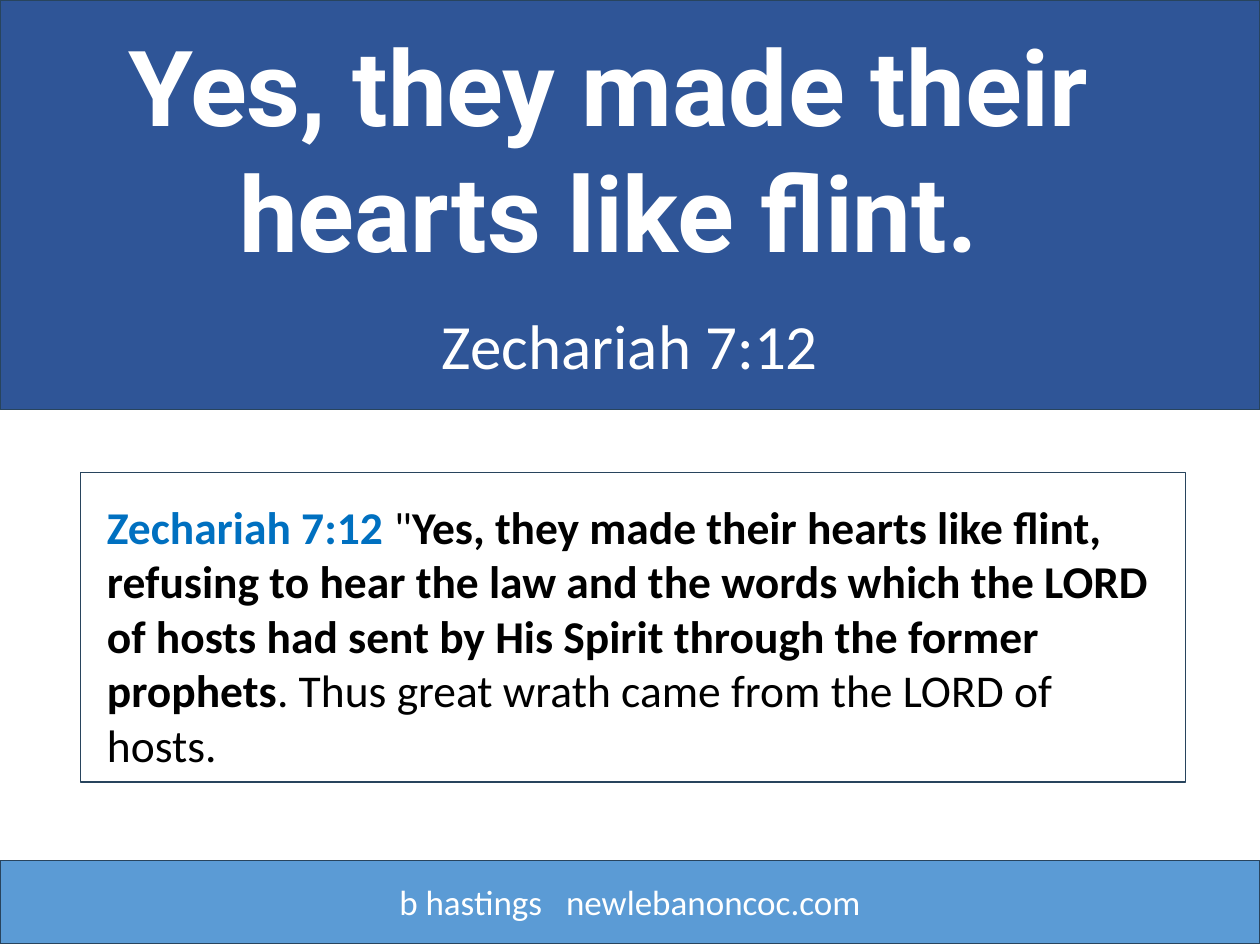
from pptx import Presentation
from pptx.dml.color import RGBColor
from pptx.enum.shapes import MSO_SHAPE
from pptx.enum.text import MSO_ANCHOR, MSO_AUTO_SIZE, PP_ALIGN
from pptx.util import Inches, Pt

NAVY = RGBColor(0x2F, 0x55, 0x97)
SKY = RGBColor(0x5B, 0x9B, 0xD5)
EDGE = RGBColor(0x28, 0x44, 0x5D)
BLUE = RGBColor(0x00, 0x70, 0xC0)
WHITE = RGBColor(0xFF, 0xFF, 0xFF)
BLACK = RGBColor(0x00, 0x00, 0x00)


class Page:
    font = "Calibri"

    def __init__(self, slide):
        self.slide = slide
        self.shapes = slide.shapes

    def rect(self, box, fill=None):
        shape = self.shapes.add_shape(MSO_SHAPE.RECTANGLE, *map(Inches, box))
        shape.shadow.inherit = False
        if fill is None:
            shape.fill.background()
        else:
            shape.fill.solid()
            shape.fill.fore_color.rgb = fill
        shape.line.color.rgb = EDGE
        shape.line.width = Pt(1)

    def style(self, run, size, color, bold=False, font=None):
        run.font.name = font or self.font
        run.font.size = Pt(size)
        run.font.bold = bold
        run.font.color.rgb = color

    def place(self, shape, box):
        shape.left, shape.top, shape.width, shape.height = map(Inches, box)
        frame = shape.text_frame
        frame.word_wrap = True
        frame.auto_size = MSO_AUTO_SIZE.NONE
        frame.vertical_anchor = MSO_ANCHOR.TOP
        return frame.paragraphs[0]

    def head(self, shape, box, text, size, font=None):
        self.shapes._spTree.append(shape._element)
        line = self.place(shape, box)
        line.text = text
        line.alignment = PP_ALIGN.CENTER
        line.space_before = Pt(0)
        self.style(line.runs[0], size, WHITE, font is not None, font)

    def text(self, box, parts, size, align=PP_ALIGN.LEFT):
        line = self.place(self.shapes.add_textbox(*map(Inches, box)), box)
        line.alignment = align
        for words, color, bold in parts:
            run = line.add_run()
            run.text = words
            self.style(run, size, color, bold)
        return line


def main():
    deck = Presentation()
    deck.slide_width, deck.slide_height = Inches(10), Inches(7.5)
    page = Page(deck.slides.add_slide(deck.slide_layouts[0]))
    title, verse = page.slide.placeholders

    page.rect((0, 6.83, 10, 0.66), SKY)
    page.rect((0, 0, 10, 3.25), NAVY)
    foot = page.text((0, 6.94, 10, 0.44), [
        ("b hastings", WHITE, False),
        (" ", WHITE, False),
        ("newlebanoncoc.com", WHITE, False),
    ], 20, PP_ALIGN.CENTER)
    foot.runs[1].font._element.set("spc", "900")
    page.text((0.75, 3.91, 8.58, 2.73), [
        ("Zechariah 7:12 ", BLUE, True),
        ('"', BLACK, False),
        ("Yes, they made their hearts like flint, refusing to hear the law "
         "and the words which the LORD of hosts had sent by His Spirit "
         "through the former prophets", BLACK, True),
        (". Thus great wrath came from the LORD of hosts.", BLACK, False),
    ], 26)
    page.head(title, (0.87, 0.12, 7.92, 2.12),
              "Yes, they made their hearts like flint.", 60, "Roboto")
    page.head(verse, (0, 2.38, 10, 0.71), "Zechariah 7:12", 36)
    page.rect((0.64, 3.75, 8.77, 2.46))

    deck.save("out.pptx")


if __name__ == "__main__":
    main()
